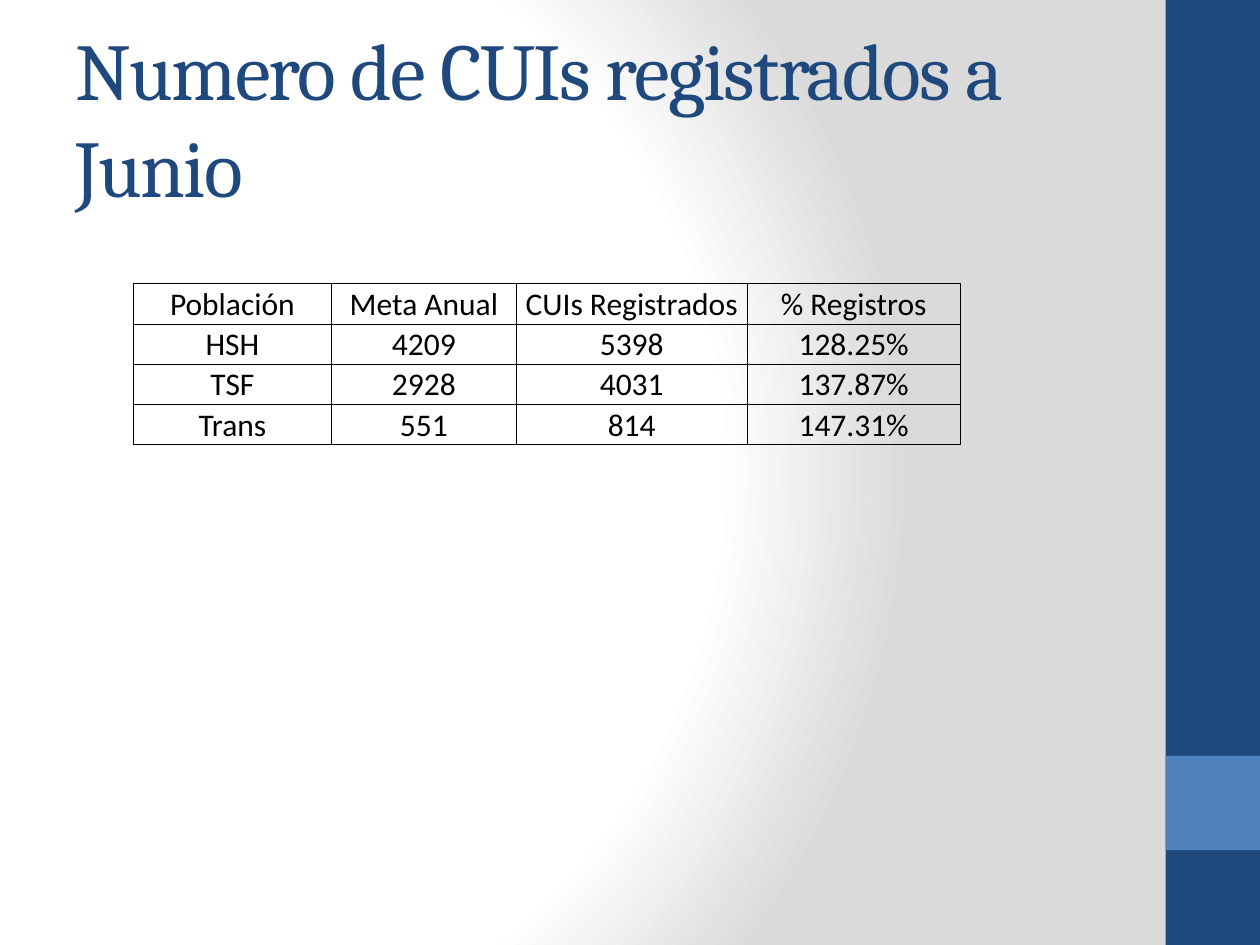
"""Build the slide of CUIs registered up to June, with its target table."""
from lxml.etree import SubElement
from pptx import Presentation
from pptx.dml.color import RGBColor
from pptx.enum.shapes import MSO_SHAPE
from pptx.enum.text import MSO_ANCHOR, PP_ALIGN
from pptx.oxml import parse_xml
from pptx.oxml.ns import nsdecls, qn
from pptx.util import Cm, Pt

NAVY = RGBColor(0x1F, 0x49, 0x7D)
BLUE = RGBColor(0x4F, 0x81, 0xBD)
BLACK = RGBColor(0, 0, 0)
WHITE = RGBColor(0xFF, 0xFF, 0xFF)
GREY = RGBColor(0xDA, 0xDA, 0xDA)

TITLE = "Numero de CUIs registrados a Junio"
ROWS = [
    ("Población", "Meta Anual", "CUIs Registrados", "% Registros"),
    ("HSH", "4209", "5398", "128.25%"),
    ("TSF", "2928", "4031", "137.87%"),
    ("Trans", "551", "814", "147.31%"),
]
COLUMN_WIDTHS = [3.99, 3.73, 4.65, 4.3]
ROW_HEIGHT = 0.81
PAGE_WIDTH, PAGE_HEIGHT = 25.4, 19.05
BAND_WIDTH = 1.9
BANDS = [(0, PAGE_HEIGHT, NAVY), (15.24, BAND_WIDTH, BLUE)]
GRADIENT_STOPS = [(0, WHITE), (75, WHITE), (100, GREY)]


def paint_background(page):
    page.background.fill.gradient()
    gradient = next(page.element.iter(qn("a:gradFill")))
    stops = "".join(
        f'<a:gs pos="{position * 1000}"><a:srgbClr val="{color}"/></a:gs>'
        for position, color in GRADIENT_STOPS
    )
    gradient.getparent().replace(gradient, parse_xml(
        f'<a:gradFill {nsdecls("a")} rotWithShape="1"><a:gsLst>{stops}</a:gsLst>'
        '<a:path path="circle"><a:fillToRect l="20000" t="50000" r="100000" b="50000"/>'
        "</a:path></a:gradFill>"
    ))


def add_bands(page):
    for top, height, color in BANDS:
        band = page.shapes.add_shape(
            MSO_SHAPE.RECTANGLE, Cm(PAGE_WIDTH - BAND_WIDTH), Cm(top), Cm(BAND_WIDTH), Cm(height))
        band.shadow.inherit = False
        band.fill.solid()
        band.fill.fore_color.rgb = color
        band.line.fill.background()


def write(para, text, font, size, color):
    span = para.add_run()
    span.text = text
    span.font.name = font
    span.font.size = Pt(size)
    span.font.color.rgb = color
    return span


def add_title(page):
    box = page.shapes.add_textbox(Cm(1.27), Cm(0.76), Cm(21.16), Cm(3.18))
    frame = box.text_frame
    frame.word_wrap = True
    frame.vertical_anchor = MSO_ANCHOR.MIDDLE
    span = write(frame.paragraphs[0], TITLE, "Cambria", 46, NAVY)
    span.font._element.set("spc", "-100")


def add_borders(cell):
    properties = cell._tc.get_or_add_tcPr()
    for index, side in enumerate(("lnL", "lnR", "lnT", "lnB")):
        line = SubElement(properties, qn(f"a:{side}"), w=str(Pt(0.5)))
        fill = SubElement(line, qn("a:solidFill"))
        SubElement(fill, qn("a:srgbClr"), val=str(BLACK))
        properties.insert(index, line)


def add_population_table(page):
    table = page.shapes.add_table(
        len(ROWS), len(COLUMN_WIDTHS), Cm(2.69), Cm(5.72),
        Cm(sum(COLUMN_WIDTHS)), Cm(ROW_HEIGHT * len(ROWS))).table
    table.first_row = table.horz_banding = False
    for column, width in zip(table.columns, COLUMN_WIDTHS):
        column.width = Cm(width)
    for row, texts in zip(table.rows, ROWS):
        row.height = Cm(ROW_HEIGHT)
        for cell, text in zip(row.cells, texts):
            cell.fill.background()
            cell.margin_left = cell.margin_right = cell.margin_top = Cm(0.03)
            cell.margin_bottom = Cm(0)
            cell.vertical_anchor = MSO_ANCHOR.BOTTOM
            para = cell.text_frame.paragraphs[0]
            para.alignment = PP_ALIGN.CENTER
            write(para, text, "Calibri", 18, BLACK)
            add_borders(cell)


def main():
    deck = Presentation()
    deck.slide_width, deck.slide_height = Cm(PAGE_WIDTH), Cm(PAGE_HEIGHT)
    page = deck.slides.add_slide(deck.slide_layouts[6])
    paint_background(page)
    add_bands(page)
    add_title(page)
    add_population_table(page)
    deck.save("out.pptx")


if __name__ == "__main__":
    main()
